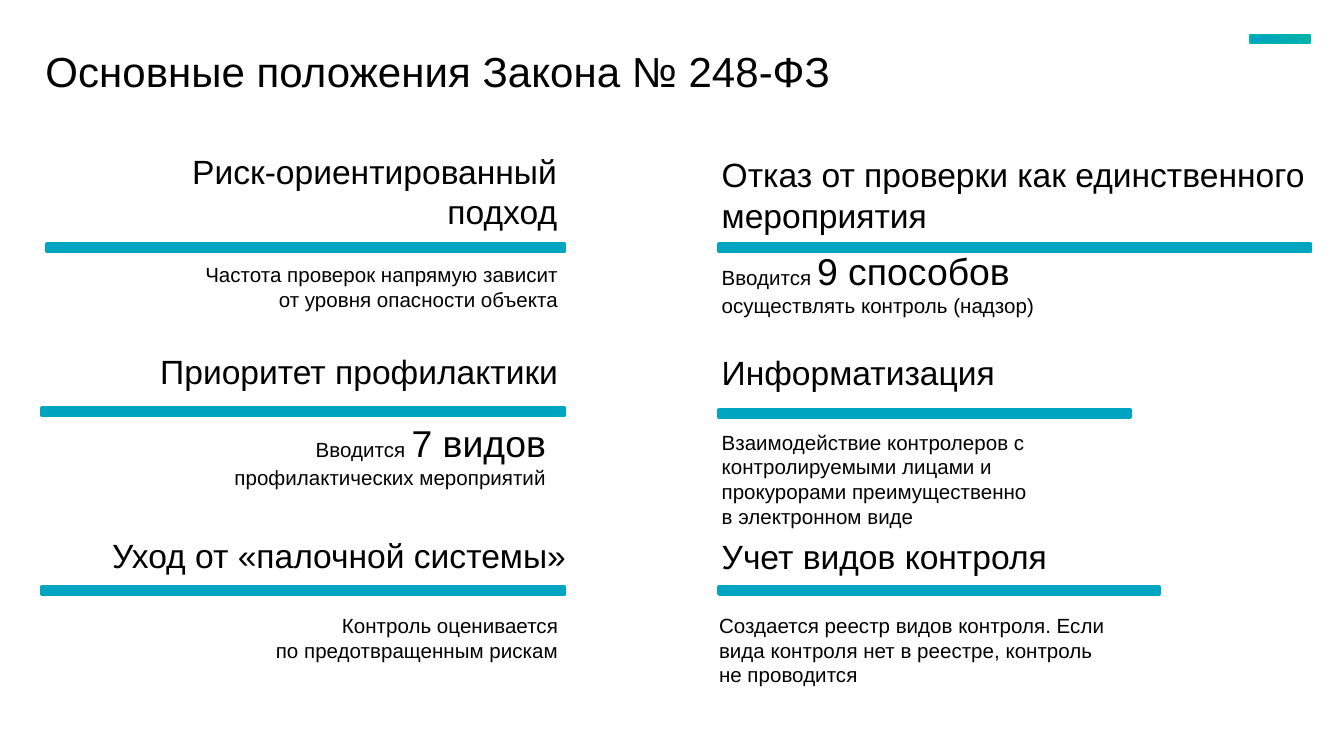
from pptx import Presentation
from pptx.dml.color import RGBColor
from pptx.enum import shapes, text
from pptx.util import Cm, Pt

LEFT, RIGHT = text.PP_ALIGN.LEFT, text.PP_ALIGN.RIGHT


def color(code):
    return RGBColor.from_string(code)


class Deck:
    font, ink = "Arial", "000000"
    fill, edge = "00A4C3", "00A5C2"
    head, body, big = 18, 11, 20

    def __init__(self, wide, high):
        self.prs = Presentation()
        self.prs.slide_width, self.prs.slide_height = Cm(wide), Cm(high)
        self.slide = self.prs.slides.add_slide(self.prs.slide_layouts[6])

    def text(self, x, y, w, h, runs, align=LEFT):
        """Add a box of (words, size) runs; a newline is a line break."""
        box = self.slide.shapes.add_textbox(Cm(x), Cm(y), Cm(w), Cm(h))
        frame = box.text_frame
        frame.word_wrap = True
        para = frame.paragraphs[0]
        para.alignment = align
        for words, size in runs:
            for i, line in enumerate(words.split("\n")):
                if i:
                    para.add_line_break()
                run = para.add_run()
                run.text = line
                run.font.name, run.font.size = self.font, Pt(size)
                run.font.color.rgb = color(self.ink)
        return frame

    def title(self, words):
        frame = self.text(0.81, 0.18, 24.5, 2.49, [(words, 22.5)])
        frame.vertical_anchor = text.MSO_ANCHOR.MIDDLE
        frame.margin_left = frame.margin_right = Cm(0.05)
        frame.margin_top = frame.margin_bottom = Cm(0.05)
        para = frame.paragraphs[0]
        para.line_spacing, para.space_before = 0.8, Pt(15.8)

    def bar(self, x, y, w, h=0.13, edge=edge, line=2):
        bar = self.slide.shapes.add_shape(
            shapes.MSO_SHAPE.RECTANGLE, Cm(x), Cm(y), Cm(w), Cm(h))
        bar.shadow.inherit = False
        bar.fill.solid()
        bar.fill.fore_color.rgb = color(self.fill)
        bar.line.color.rgb = color(edge)
        bar.line.width = Pt(line)
        return bar

    def accent(self):
        bar = self.bar(23.62, 0.66, 1.14, 0.15, "00B3AF", 1)
        bar.fill.gradient()
        bar.fill.gradient_angle = 0
        for stop, code in zip(bar.fill.gradient_stops, ("00A0C3", "00B3A9")):
            stop.color.rgb = color(code)

    def point(self, side, head, bar, body):
        """Add a heading, a bar and a note; x is the edge the text aligns to."""
        self.bar(*bar)
        for (x, y, w, h, runs) in (head, body):
            self.text(x - w if side == RIGHT else x, y, w, h, runs, side)


def main():
    deck = Deck(25.4, 14.29)
    head, body, big = deck.head, deck.body, deck.big
    deck.title("Основные положения Закона № 248-ФЗ")
    deck.accent()

    # side, heading (x, y, w, h, runs), bar (x, y, w), note (x, y, w, h, runs)
    points = [
        (RIGHT,
         (10.78, 2.72, 9.9, 1.8, [("Риск-ориентированный\nподход", head)]),
         (0.89, 4.62, 9.78),
         (10.8, 4.83, 9.53, 1.19,
          [("Частота проверок напрямую зависит\nот уровня опасности объекта",
            body)])),
        (RIGHT,
         (10.8, 6.5, 9.9, 1.02, [("Приоритет профилактики", head)]),
         (0.79, 7.72, 9.88),
         (10.57, 7.82, 8.31, 1.57,
          [("Вводится", body), (" ", 12), ("7 видов ", big),
           ("профилактических мероприятий", body)])),
        (RIGHT,
         (10.95, 9.98, 9.9, 1.02, [("Уход от «палочной системы»", head)]),
         (0.79, 11.1, 9.88),
         (10.8, 11.46, 8.33, 1.19,
          [("Контроль оценивается\nпо предотвращенным рискам", body)])),
        (LEFT,
         (13.39, 2.79, 11.9, 1.8,
          [("Отказ от проверки как единственного мероприятия", head)]),
         (13.59, 4.62, 11.18),
         (13.39, 4.57, 8.31, 1.57,
          [("Вводится ", body), ("9 способов ", big),
           ("осуществлять контроль (надзор)", body)])),
        (LEFT,
         (13.39, 6.53, 8.31, 1.02, [("Информатизация", head)]),
         (13.59, 7.75, 7.77),
         (13.39, 8, 7.19, 2.13,
          [("Взаимодействие контролеров c контролируемыми лицами и "
            "прокурорами преимущественно\nв электронном виде", body)])),
        (LEFT,
         (13.39, 10.01, 9.19, 1.02, [("Учет видов контроля", head)]),
         (13.59, 11.1, 8.31),
         (13.34, 11.46, 8.05, 1.68,
          [("Создается реестр видов контроля. Если вида контроля нет "
            "в реестре, контроль не проводится", body)])),
    ]
    for point in points:
        deck.point(*point)
    deck.prs.save("out.pptx")


if __name__ == "__main__":
    main()
